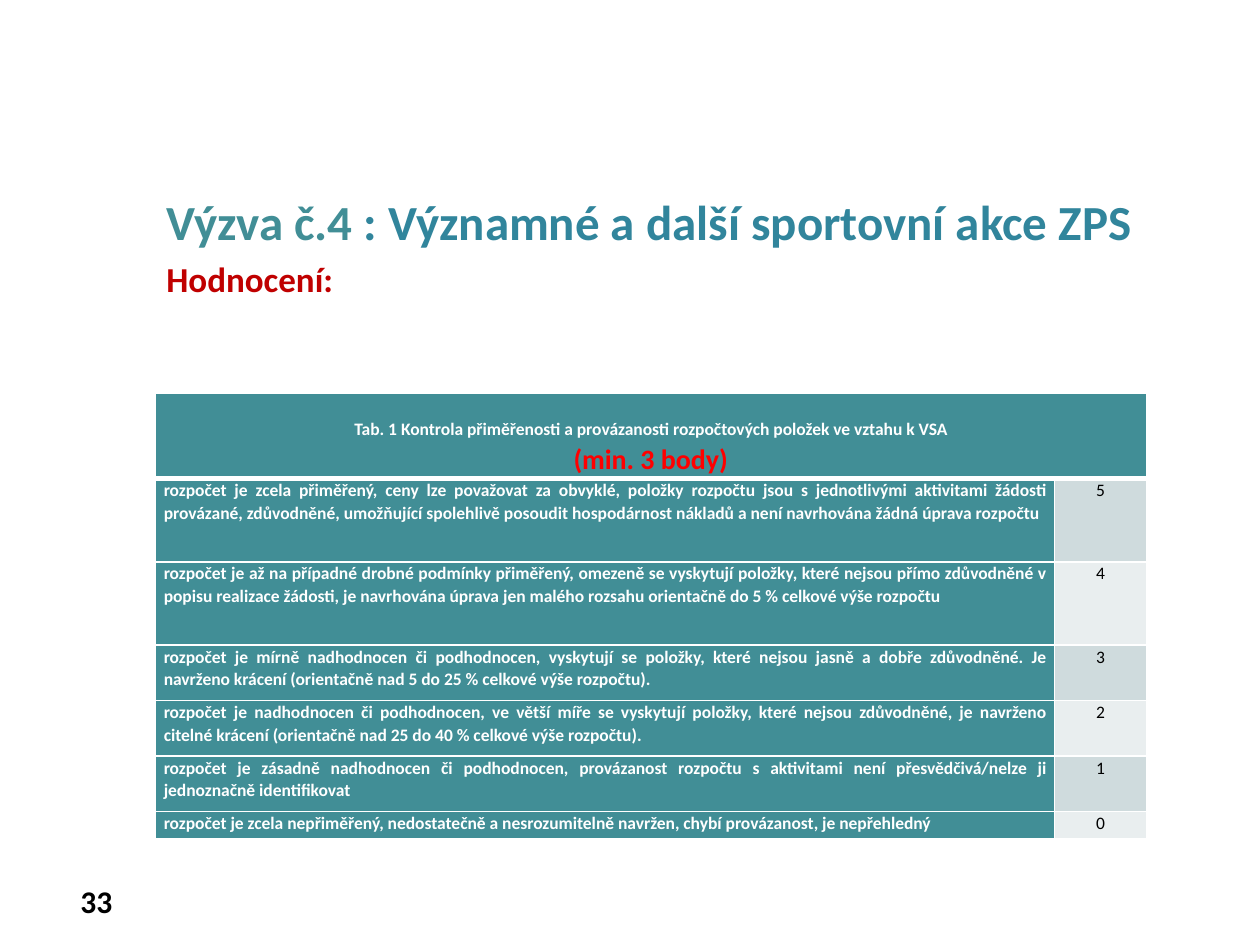
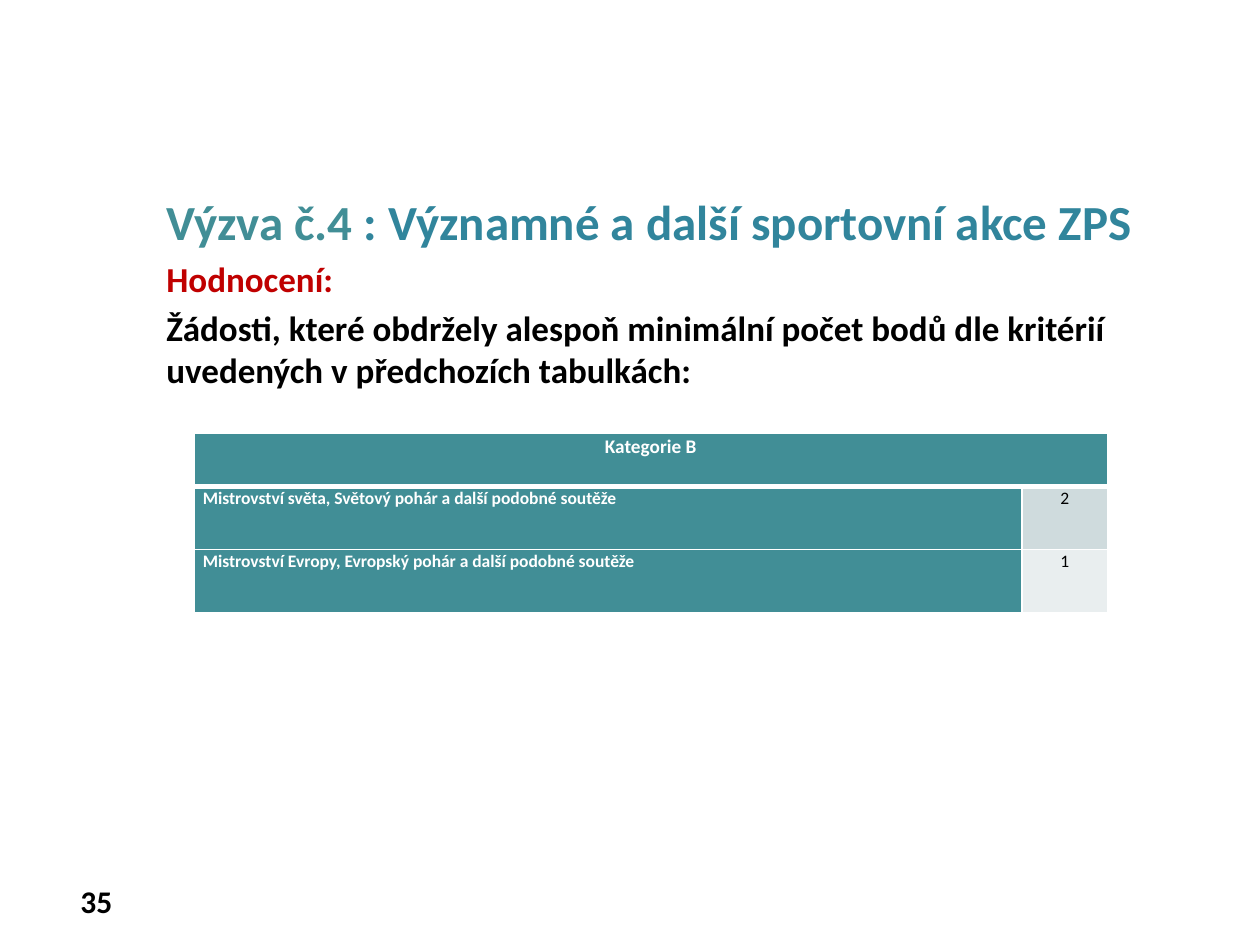
import pptx
import pptx.dml.color
import pptx.enum.text
import pptx.oxml
import pptx.oxml.ns
import pptx.util

Pt = pptx.util.Pt
ALIGN = pptx.enum.text.PP_ALIGN
ANCHOR = pptx.enum.text.MSO_ANCHOR

TEAL, BLUE, CRIMSON, RED = "418E96", "31859C", "C00000", "FF0000"
BLACK, WHITE = "000000", "FFFFFF"
BANDS = ["CFDBDD", "E9EEEF"]
SIDES = ["L", "R", "T", "B"]
THIN, THICK = 1, 3

# Table lengths: columns and rows of a 100 by 100 grid over the slide
slides = [
    {
        "number": "33",
        "lines": [("Hodnocení:", CRIMSON)],
        "header": [
            ("Tab. 1 Kontrola přiměřenosti a provázanosti rozpočtových položek ve vztahu k VSA", 10, WHITE),
            ("(min. 3 body)", 16, RED),
        ],
        "header_top": 2.4,
        "header_anchor": ANCHOR.MIDDLE,
        "criteria": [
            ("rozpočet je zcela přiměřený, ceny lze považovat za obvyklé, položky rozpočtu jsou s jednotlivými "
             "aktivitami žádosti provázané, zdůvodněné, umožňující spolehlivě posoudit hospodárnost nákladů "
             "a není navrhována žádná úprava rozpočtu", "5"),
            ("rozpočet je až na případné drobné podmínky přiměřený, omezeně se vyskytují položky, které nejsou "
             "přímo zdůvodněné v popisu realizace žádosti, je navrhována úprava jen malého rozsahu orientačně "
             "do 5 % celkové výše rozpočtu", "4"),
            ("rozpočet je mírně nadhodnocen či podhodnocen, vyskytují se položky, které nejsou jasně a dobře "
             "zdůvodněné. Je navrženo krácení (orientačně nad 5 do 25 % celkové výše rozpočtu).", "3"),
            ("rozpočet je nadhodnocen či podhodnocen, ve větší míře se vyskytují položky, které nejsou zdůvodněné, "
             "je navrženo citelné krácení (orientačně nad 25 do 40 % celkové výše rozpočtu).", "2"),
            ("rozpočet je zásadně nadhodnocen či podhodnocen, provázanost rozpočtu s aktivitami není "
             "přesvědčivá/nelze ji jednoznačně identifikovat", "1"),
            ("rozpočet je zcela nepřiměřený, nedostatečně a nesrozumitelně navržen, chybí provázanost, "
             "je nepřehledný", "0"),
        ],
        "criteria_align": ALIGN.JUSTIFY,
        "corner": (12.3, 41.6),
        "widths": [71.4, 7.3],
        "heights": [9.07, 8.8, 8.8, 5.87, 5.87, 5.87, 2.93],
    },
    {
        "number": "35",
        "lines": [
            ("Hodnocení:", CRIMSON),
            ("Žádosti, které obdržely alespoň minimální počet bodů dle kritérií uvedených v předchozích tabulkách:",
             BLACK),
        ],
        "header": [("Kategorie B", 11, WHITE)],
        "header_top": 0,
        "header_anchor": ANCHOR.TOP,
        "criteria": [
            ("Mistrovství světa, Světový pohár a další podobné soutěže", "2"),
            ("Mistrovství Evropy, Evropský pohár a další podobné soutěže", "1"),
        ],
        "criteria_align": ALIGN.LEFT,
        "corner": (15.4, 45.87),
        "widths": [65.7, 6.8],
        "heights": [5.6, 6.67, 6.67],
    },
]


def colour(hex_string):
    return pptx.dml.color.RGBColor.from_string(hex_string)


def write(frame, lines, align, bold=True, spacing=1.0):
    """Fill a text frame with (text, size, colour) lines and return its paragraphs."""
    for index, (text, size, tone) in enumerate(lines):
        para = frame.add_paragraph() if index else frame.paragraphs[0]
        para.text = text
        para.alignment = align
        para.line_spacing = spacing
        para.font.name = "Calibri"
        para.font.size = Pt(size)
        para.font.bold = bold
        para.font.color.rgb = colour(tone)
    return frame.paragraphs


deck = pptx.Presentation()
deck.slide_width = pptx.util.Inches(10)
deck.slide_height = pptx.util.Inches(7.5)
column = deck.slide_width / 100
row = deck.slide_height / 100

for content in slides:
    page = deck.slides.add_slide(deck.slide_layouts[1])
    title = page.shapes.title
    title.element.getparent().remove(title.element)

    # Heading and introduction
    body = page.placeholders[1]
    body.left, body.top = int(12.2 * column), int(19.6 * row)
    body.width, body.height = int(82.8 * column), int(76.67 * row)
    body.text_frame.auto_size = pptx.enum.text.MSO_AUTO_SIZE.NONE
    lines = [("Výzva č.4 ", 28, TEAL)] + [(text, 20, tone) for text, tone in content["lines"]]
    paras = write(body.text_frame, lines, ALIGN.LEFT)
    for index, para in enumerate(paras):
        para.space_before = Pt(4 if index else 0)
        properties = para._p.get_or_add_pPr()
        properties.set("marL", "0")
        properties.set("indent", "0")
        no_bullet = pptx.oxml.parse_xml(f'<a:buNone {pptx.oxml.ns.nsdecls("a")}/>')
        properties.insert_element_before(no_bullet, "a:tabLst", "a:defRPr", "a:extLst")
    span = paras[0].add_run()
    span.text = ": Významné a další sportovní akce ZPS"
    span.font.color.rgb = colour(BLUE)

    # Scoring table
    left, top = content["corner"]
    widths, heights = content["widths"], content["heights"]
    table = page.shapes.add_table(
        len(heights), len(widths), int(left * column), int(top * row),
        int(sum(widths) * column), int(sum(heights) * row)).table
    for index, width in enumerate(widths):
        table.columns[index].width = int(width * column)
    for index, height in enumerate(heights):
        table.rows[index].height = int(height * row)

    header = table.cell(0, 0)
    header.merge(table.cell(0, 1))
    write(header.text_frame, content["header"], ALIGN.CENTER, spacing=1.07)
    for index, (criterion, points) in enumerate(content["criteria"], start=1):
        write(table.cell(index, 0).text_frame, [(criterion, 10, WHITE)],
              content["criteria_align"], spacing=1.07)
        write(table.cell(index, 1).text_frame, [(points, 10, BLACK)],
              ALIGN.CENTER, bold=False, spacing=1.07)

    for row_index in range(len(heights)):
        for column_index in range(len(widths)):
            cell = table.cell(row_index, column_index)
            cell.margin_left = cell.margin_right = pptx.util.Inches(0.07)
            cell.margin_top = cell.margin_bottom = 0
            is_score = row_index > 0 and column_index == 1
            cell.fill.solid()
            cell.fill.fore_color.rgb = colour(BANDS[(row_index - 1) % 2] if is_score else TEAL)
            for position, side in enumerate(SIDES):
                under_header = (row_index, side) in [(0, "B"), (1, "T")]
                line_width = Pt(THICK if under_header else THIN)
                border = pptx.oxml.parse_xml(
                    f'<a:ln{side} {pptx.oxml.ns.nsdecls("a")} w="{line_width}">'
                    f'<a:solidFill><a:srgbClr val="{WHITE}"/></a:solidFill></a:ln{side}>')
                cell._tc.get_or_add_tcPr().insert(position, border)
    header.vertical_anchor = content["header_anchor"]
    header.margin_top = int(content["header_top"] * row)

    # Page number
    box = page.shapes.add_textbox(int(2.8 * column), int(92.67 * row), int(7.1 * column), int(5.33 * row))
    box.text_frame.word_wrap = True
    box.text_frame.vertical_anchor = ANCHOR.MIDDLE
    write(box.text_frame, [(content["number"], 18, BLACK)], ALIGN.RIGHT)

deck.save("out.pptx")
